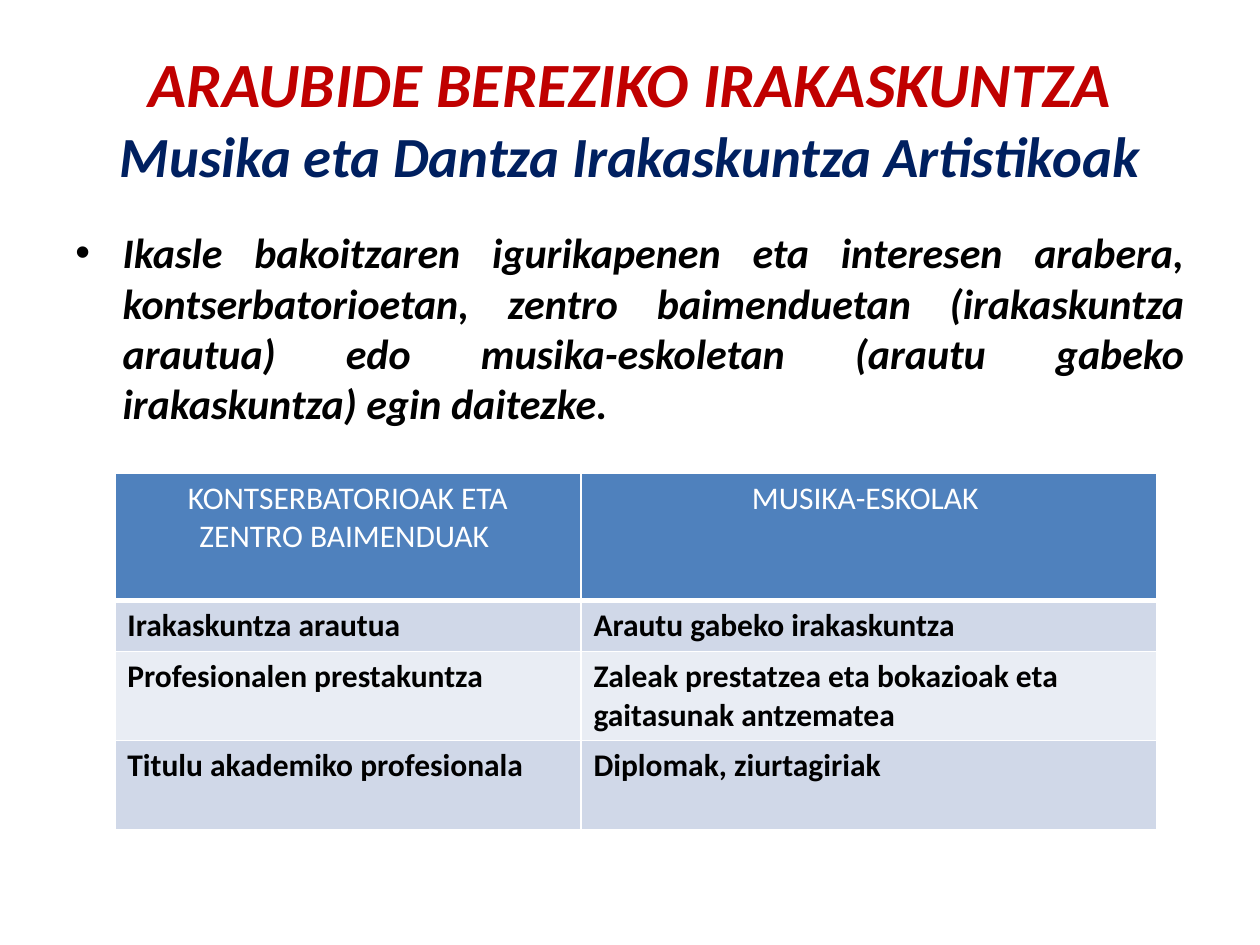
from lxml import etree
from pptx import Presentation
from pptx.dml.color import RGBColor
from pptx.enum import text as t
from pptx.oxml.ns import qn
from pptx.util import Pt

HUES = {"red": "C00000", "navy": "002060", "black": "000000", "white": "FFFFFF",
        "head": "4F81BD", "odd": "D0D8E8", "even": "E9EDF4"}
TITLE = [("ARAUBIDE BEREZIKO IRAKASKUNTZA", 36, "red"),
         ("Musika eta Dantza Irakaskuntza Artistikoak", 32.4, "navy")]
BODY = ("Ikasle bakoitzaren igurikapenen eta interesen arabera, "
        "kontserbatorioetan, zentro baimenduetan (irakaskuntza arautua) edo "
        "musika-eskoletan (arautu gabeko irakaskuntza) egin daitezke.")
ROWS = [
    (["KONTSERBATORIOAK ETA", "ZENTRO BAIMENDUAK "], ["MUSIKA-ESKOLAK "]),
    (["Irakaskuntza arautua"], ["Arautu gabeko irakaskuntza"]),
    (["Profesionalen prestakuntza"],
     ["Zaleak prestatzea eta bokazioak eta gaitasunak antzematea"]),
    (["Titulu akademiko profesionala"], ["Diplomak, ziurtagiriak"]),
]
WIDTHS = [266.4, 329]
HEIGHTS = [72.8, 29.2, 51, 51]


def rgb(name):
    return RGBColor.from_string(HUES[name])


def write(para, words, size, hue, **style):
    run = para.add_run()
    run.text = words
    for key, val in {"name": "Calibri", "size": Pt(size), **style}.items():
        setattr(run.font, key, val)
    run.font.color.rgb = rgb(hue)


def box(slide, area, anchor):
    frame = slide.shapes.add_textbox(*map(Pt, area)).text_frame
    frame.word_wrap = True
    frame.vertical_anchor = anchor
    return frame.paragraphs[0]


def edge(cell, side, width):
    line = etree.SubElement(cell._tc.get_or_add_tcPr(), qn("a:ln" + side),
                            w=str(Pt(width)))
    fill = etree.SubElement(line, qn("a:solidFill"))
    etree.SubElement(fill, qn("a:srgbClr"), val=HUES["white"])


def bullet(para, indent):
    props = para._p.get_or_add_pPr()
    props.set("marL", str(Pt(indent)))
    props.set("indent", str(-Pt(indent)))
    etree.SubElement(props, qn("a:buFont"), typeface="Arial")
    etree.SubElement(props, qn("a:buChar"), char="•")


def grid(slide):
    frame = slide.shapes.add_table(len(ROWS), len(WIDTHS), Pt(65.6), Pt(270.2),
                                   Pt(sum(WIDTHS)), Pt(sum(HEIGHTS)))
    table = frame.table
    for col, width in zip(table.columns, WIDTHS):
        col.width = Pt(width)
    for r, row in enumerate(ROWS):
        table.rows[r].height = Pt(HEIGHTS[r])
        head = r == 0
        for c, lines in enumerate(row):
            cell = table.cell(r, c)
            for side in "LRTB":
                edge(cell, side, 3 if head and side == "B" else 1)
            cell.fill.solid()
            cell.fill.fore_color.rgb = rgb("head" if head else "odd" if r % 2 else "even")
            for n, words in enumerate(lines):
                frame = cell.text_frame
                para = frame.add_paragraph() if n else frame.paragraphs[0]
                para.alignment = t.PP_ALIGN.CENTER if head else t.PP_ALIGN.LEFT
                write(para, words, 18, "white" if head else "black", bold=not head)


def main():
    deck = Presentation()
    deck.slide_width, deck.slide_height = Pt(720), Pt(540)
    slide = deck.slides.add_slide(deck.slide_layouts[6])

    title = box(slide, (36, 21.6, 648, 90), t.MSO_ANCHOR.MIDDLE)
    title.alignment = t.PP_ALIGN.CENTER
    for n, (words, size, hue) in enumerate(TITLE):
        if n:
            title.add_line_break()
        write(title, words, size, hue, bold=True, italic=True)

    body = box(slide, (36, 126, 648, 356.4), t.MSO_ANCHOR.TOP)
    body.alignment = t.PP_ALIGN.JUSTIFY
    body.space_before = Pt(4.8)
    bullet(body, 27)
    write(body, BODY, 24, "black", bold=True, italic=True)

    grid(slide)
    deck.save("out.pptx")


if __name__ == "__main__":
    main()
